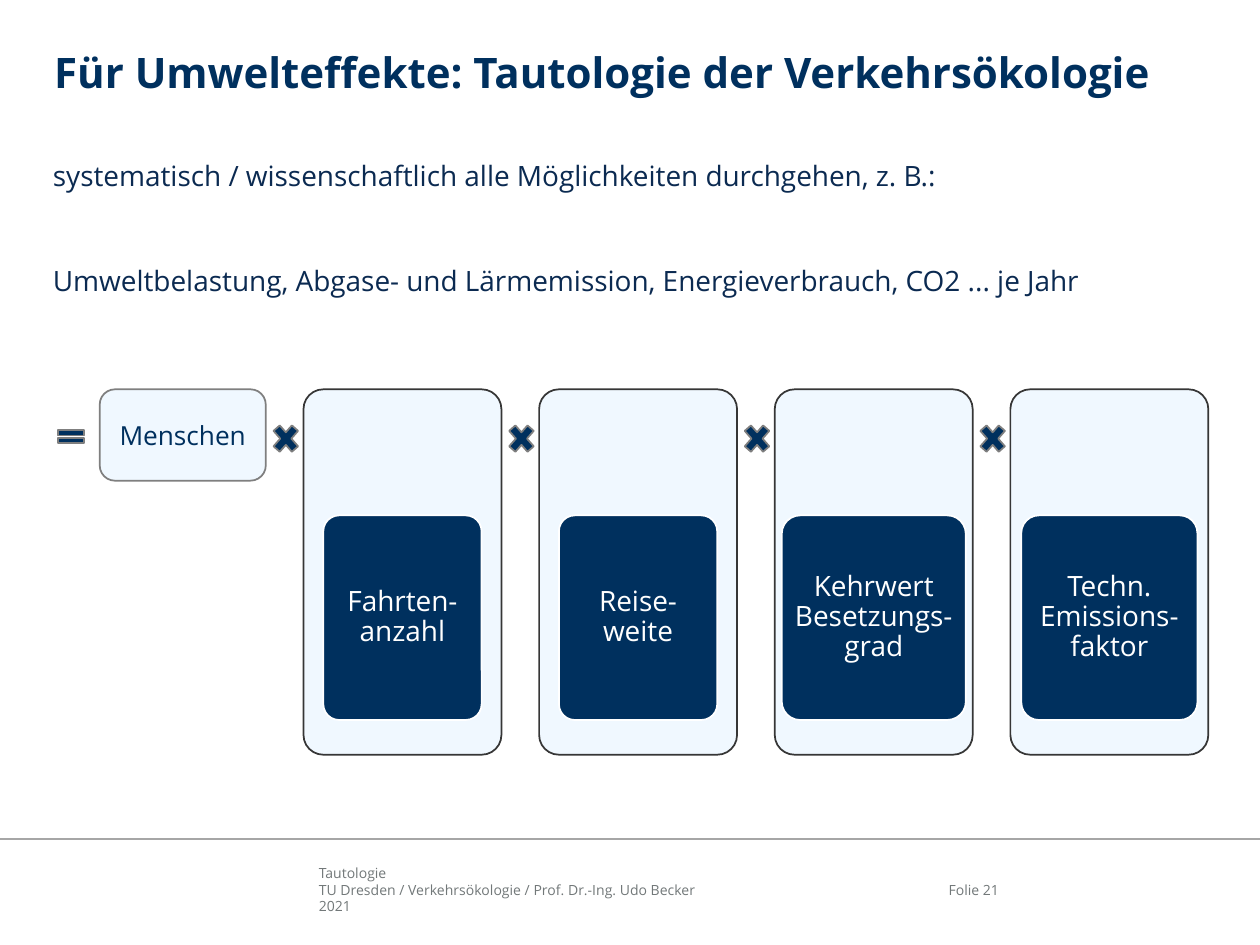
from dataclasses import dataclass

from lxml.etree import SubElement
from pptx import Presentation
from pptx.dml.color import RGBColor
from pptx.enum.shapes import MSO_CONNECTOR as Connector, MSO_SHAPE as Shape
from pptx.enum.text import MSO_ANCHOR as Anchor, MSO_AUTO_SIZE as AutoSize, PP_ALIGN as Align
from pptx.oxml.ns import qn
from pptx.util import Inches, Pt


@dataclass(frozen=True)
class Theme:
    font: str = "Open Sans"
    navy: str = "00305E"
    body: str = "0B2A51"
    footer: str = "727879"
    rule: str = "A6A6A6"
    card: str = "F0F8FF"
    card_line: str = "363636"
    pale: str = "D5EBFF"
    grey: str = "7F7F7F"
    white: str = "FFFFFF"
    title_size: int = 24
    text_size: int = 16
    people_size: int = 15
    footer_size: int = 8


@dataclass(frozen=True)
class Box:
    """An area in inches; share() gives a fraction of it."""
    left: float
    top: float
    width: float
    height: float

    def share(self, left, top, width, height):
        return Box(self.left + left * self.width, self.top + top * self.height,
                   width * self.width, height * self.height)

    def lengths(self):
        return [Inches(value) for value in (self.left, self.top, self.width, self.height)]


THEME = Theme()
PAGE = Box(0, 0, 10, 7.5)
FACTORS = [  # label and share of the card width
    ("Fahrten-anzahl", 0.8),
    ("Reise-\vweite", 0.8),
    ("Kehrwert Besetzungs-grad", 0.93),
    ("Techn. Emissions-faktor", 0.89),
]


def color(value):
    return RGBColor.from_string(value)


def write(shape, lines, size, text_color, align=Align.LEFT, anchor=Anchor.TOP,
          insets=(0, 0), bold=False):
    frame = shape.text_frame
    frame.word_wrap = True
    frame.auto_size = AutoSize.NONE
    frame.vertical_anchor = anchor
    frame.margin_left = frame.margin_right = Inches(insets[0])
    frame.margin_top = frame.margin_bottom = Inches(insets[1])
    frame.text = "\n".join(lines)
    for paragraph in frame.paragraphs:
        paragraph.alignment = align
        font = paragraph.font
        font.name, font.size, font.bold = THEME.font, Pt(size), bold
        font.color.rgb = color(text_color)
    return frame


def add_block(slide, kind, box, fill, line, corner=None):
    shape = slide.shapes.add_shape(kind, *box.lengths())
    shape.shadow.inherit = False
    shape.fill.solid()
    shape.fill.fore_color.rgb = color(fill)
    shape.line.color.rgb = color(line)
    shape.line.width = Pt(1)
    if corner is not None:
        shape.adjustments[0] = corner
    return shape


def place(placeholder, box):
    placeholder.left, placeholder.top, placeholder.width, placeholder.height = box.lengths()


def fill_title(slide, box):
    title = slide.shapes.title
    place(title, box)
    write(title, ["Für Umwelteffekte: Tautologie der Verkehrsökologie"],
          THEME.title_size, THEME.navy, bold=True)


def fill_body(slide, box):
    body = slide.placeholders[1]
    place(body, box)
    frame = write(body, [
        "systematisch / wissenschaftlich alle Möglichkeiten durchgehen, z. B.:",
        "Umweltbelastung, Abgase- und Lärmemission, Energieverbrauch, CO2 ... je Jahr",
    ], THEME.text_size, THEME.body)
    for index, paragraph in enumerate(frame.paragraphs):
        paragraph.space_before = Pt(40.5 * index)
        properties = paragraph._p.get_or_add_pPr()
        properties.set("marL", "0")
        properties.set("indent", "0")
        properties.insert_element_before(
            properties.makeelement(qn("a:buNone")), "a:tabLst", "a:defRPr", "a:extLst")


def add_people(slide, box):
    """Equals sign and the first factor."""
    add_block(slide, Shape.MATH_EQUAL, box.share(0, 0.1, 0.17, 0.06), THEME.navy, THEME.grey)
    people = add_block(slide, Shape.ROUNDED_RECTANGLE, box.share(0.22, 0, 0.78, 0.25),
                       THEME.pale, THEME.grey)
    fill_color = people._element.spPr.find(qn("a:solidFill"))[0]
    SubElement(fill_color, qn("a:alpha"), val="35000")
    write(people, ["Menschen"], THEME.people_size, THEME.navy, Align.CENTER, Anchor.MIDDLE)


def add_factor(slide, box, label, tile_width):
    """Multiplication sign, card and labelled tile in one column."""
    add_block(slide, Shape.MATH_MULTIPLY, box.share(0.01, 0.08, 0.15, 0.11),
              THEME.navy, THEME.grey)
    card = box.share(0.16, 0, 0.84, 1)
    add_block(slide, Shape.ROUNDED_RECTANGLE, card, THEME.card, THEME.card_line, 0.1)
    tile_box = card.share((1 - tile_width) / 2, 10 / 29, tile_width, 0.56)
    tile = add_block(slide, Shape.ROUNDED_RECTANGLE, tile_box, THEME.navy, THEME.white, 0.1)
    frame = write(tile, [label], THEME.text_size, THEME.white, Align.CENTER,
                  Anchor.MIDDLE, (0.04, 0.03))
    frame.paragraphs[0].line_spacing = 0.9


def add_equation(slide, box):
    first_width, column = 1.69, 1.87
    add_people(slide, Box(box.left, box.top, first_width, box.height))
    for index, (label, tile_width) in enumerate(FACTORS):
        left = box.left + first_width + index * column
        add_factor(slide, Box(left, box.top, column, box.height), label, tile_width)


def add_footer(slide, box):
    # Rule across the page
    rule = slide.shapes.add_connector(
        Connector.STRAIGHT, Inches(box.left), Inches(box.top),
        Inches(box.left + box.width), Inches(box.top))
    rule.line.color.rgb = color(THEME.rule)
    rule.line.width = Pt(1)
    SubElement(rule._element.spPr, qn("a:effectLst"))

    # Source and slide number
    text_top, text_height = box.top + 0.2, 0.4
    source_box = Box(box.left + 2.53, text_top, 4.52, text_height)
    source = slide.shapes.add_textbox(*source_box.lengths())
    write(source, ["Tautologie", "TU Dresden / Verkehrsökologie / Prof. Dr.-Ing. Udo Becker",
                   "2021"], THEME.footer_size, THEME.footer)
    number_box = Box(box.left + 7.17, text_top, 0.76, text_height)
    number = slide.shapes.add_textbox(*number_box.lengths())
    write(number, ["Folie 21"], THEME.footer_size, THEME.footer, Align.RIGHT, Anchor.MIDDLE)


def main():
    presentation = Presentation()
    presentation.slide_width = Inches(PAGE.width)
    presentation.slide_height = Inches(PAGE.height)
    slide = presentation.slides.add_slide(presentation.slide_layouts[1])
    add_footer(slide, Box(0, 6.66, PAGE.width, 0.84))
    fill_title(slide, Box(0.43, 0.37, 9.15, 0.47))
    fill_body(slide, Box(0.42, 1.26, 9.16, 1.6))
    add_equation(slide, Box(0.42, 3.09, 9.17, 2.9))
    presentation.save("out.pptx")


if __name__ == "__main__":
    main()
